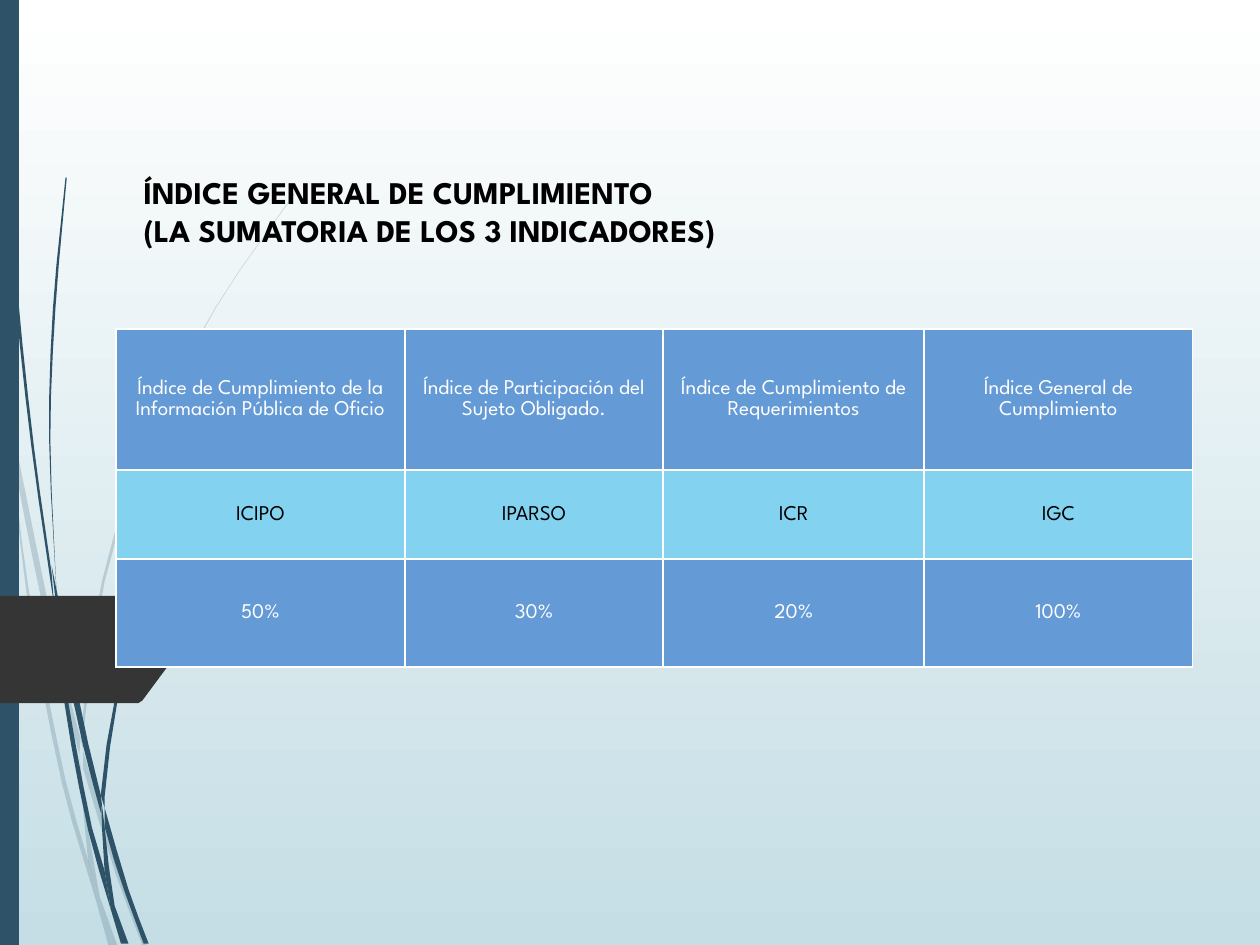
import itertools
import math

import lxml.etree
import pptx
import pptx.dml.color
import pptx.enum.shapes
import pptx.enum.text
import pptx.oxml
import pptx.oxml.ns
import pptx.util

Cm = pptx.util.Cm
FONT = "League Spartan"
COLORS = {
    "white": "FFFFFF", "black": "000000", "mist": "C5DEE5", "navy": "2E5369",
    "charcoal": "353535", "blue": "649AD6", "sky": "83D2F0",
}
GRID_ROWS = 750
STEP_LENGTH = 45

FAINT_STRANDS = [
    ([(8, 350), (0, 282)], [(0, 299), (8, 350)]),
    ([(11, 345), (13, 376), (43, 522), (63, 599)], [(64, 586), (47, 520), (11, 345)]),
    ([(66, 610), (92, 694), (113, 750)], [(116, 750), (95, 692), (66, 596)]),
    ([(8, 350), (21, 470), (49, 621), (76, 714)], [(70, 683), (52, 619), (23, 469), (8, 350)]),
    ([(63, 599), (70, 683), (79, 711)], [(68, 646), (63, 599)]),
    ([(66, 596), (66, 584), (83, 462), (120, 349), (171, 245), (234, 154)],
     [(234, 153), (171, 244), (118, 348), (81, 461), (64, 585), (66, 596)]),
    ([(70, 683), (76, 714), (86, 750)], [(93, 750), (79, 711), (70, 683)]),
]
DARK_STRANDS = [
    ([(2, 0), (5, 110), (12, 233), (25, 355), (43, 481)],
     [(41, 455), (27, 355), (14, 232), (6, 109), (3, 0)]),
    ([(41, 449), (48, 505), (66, 592), (80, 645)], [(80, 631), (70, 590), (41, 449)]),
    ([(83, 641), (83, 656), (99, 708), (114, 749)], [(118, 749), (102, 706), (83, 641)]),
    ([(43, 477), (51, 557), (70, 659), (88, 722)], [(83, 691), (73, 657), (54, 556), (43, 477)]),
    ([(45, 472), (40, 349), (44, 245), (53, 141)], [(52, 141), (42, 245), (39, 349), (45, 472)]),
    ([(83, 641), (83, 633), (94, 552), (119, 476), (153, 406), (196, 344)],
     [(195, 344), (153, 405), (117, 474), (92, 551), (80, 631), (83, 641)]),
    ([(80, 631), (83, 691), (88, 722), (96, 749)],
     [(102, 749), (91, 719), (83, 656), (80, 631)]),
]
TAG_OUTLINE = [(0, 473), (110, 473), (113, 474), (142, 513), (143, 515),
               (142, 517), (113, 556), (110, 558), (0, 558)]

HEADINGS = [
    "Índice de Cumplimiento de la Información Pública de Oficio",
    "Índice de Participación del Sujeto Obligado.",
    "Índice de Cumplimiento de Requerimientos",
    "Índice General de Cumplimiento",
]
TABLE_ROWS = [
    (2.84, "blue", "white", HEADINGS),
    (1.8, "sky", "black", ["ICIPO", "IPARSO", "ICR", "IGC"]),
    (2.18, "blue", "white", ["50%", "30%", "20%", "100%"]),
]
COLUMN_WIDTHS = [5.82, 5.21, 5.26, 5.41]


def rgb(name):
    """Return the named colour."""
    return pptx.dml.color.RGBColor.from_string(COLORS[name])


def paint(shape, color, opacity=100):
    """Fill a shape with a flat colour, without line or shadow."""
    shape.shadow.inherit = False
    shape.line.fill.background()
    shape.fill.solid()
    shape.fill.fore_color.rgb = rgb(color)
    if opacity < 100:
        tone = shape._element.spPr.find(".//" + pptx.oxml.ns.qn("a:srgbClr"))
        lxml.etree.SubElement(tone, pptx.oxml.ns.qn("a:alpha"), val=str(opacity * 1000))


def smooth(points):
    """Return points along a smooth curve through the given points."""
    last = len(points) - 1

    def slope(index):
        before, after = max(index - 1, 0), min(index + 1, last)
        span = sum(math.dist(points[i], points[i + 1]) for i in range(before, after))
        return [(b - a) / span for a, b in zip(points[before], points[after])]

    curve = [points[0]]
    for index, (start, end) in enumerate(itertools.pairwise(points)):
        length = math.dist(start, end)
        leave, arrive = slope(index), slope(index + 1)
        steps = math.ceil(length / STEP_LENGTH)
        for step in range(1, steps + 1):
            t = step / steps
            curve.append(tuple(
                (2 * t**3 - 3 * t**2 + 1) * start[axis] + (3 * t**2 - 2 * t**3) * end[axis]
                + length * ((t**3 - 2 * t**2 + t) * leave[axis] + (t**3 - t**2) * arrive[axis])
                for axis in (0, 1)))
    return curve


def add_outline(page, box, points, color, opacity=100):
    """Draw a closed outline given on a grid that fills the height of the box."""
    left, top, _, height = box
    unit = height / GRID_ROWS
    corners = [(Cm(left + x * unit), Cm(top + y * unit)) for x, y in points]
    builder = page.shapes.build_freeform(*corners[0])
    builder.add_line_segments(corners[1:], close=True)
    paint(builder.convert_to_shape(), color, opacity)


def add_decoration(page, box):
    """Draw the grass strands, the side bar and the tag at the left of the box."""
    for strands, opacity in ((FAINT_STRANDS, 20), (DARK_STRANDS, 100)):
        for outward, back in strands:
            add_outline(page, box, smooth(outward) + smooth(back), "navy", opacity)
    left, top, _, height = box
    bar = page.shapes.add_shape(
        pptx.enum.shapes.MSO_SHAPE.RECTANGLE, Cm(left), Cm(top), Cm(0.38), Cm(height))
    paint(bar, "navy")
    add_outline(page, box, TAG_OUTLINE, "charcoal")


def add_span(para, text, size, color, bold):
    """Add one formatted run to a paragraph."""
    span = para.add_run()
    span.text = text
    span.font.name = FONT
    span.font.size = pptx.util.Pt(size)
    span.font.bold = bold
    span.font.color.rgb = rgb(color)


def add_title(page, box, lines):
    """Place the title lines at the bottom of the box, in front of the decoration."""
    title = page.shapes.title
    page.shapes._spTree.append(title._element)
    title.left, title.top, title.width, title.height = map(Cm, box)
    frame = title.text_frame
    frame.word_wrap = True
    frame.auto_size = pptx.enum.text.MSO_AUTO_SIZE.NONE
    frame.vertical_anchor = pptx.enum.text.MSO_ANCHOR.BOTTOM
    frame.margin_bottom = Cm(0.9)
    for index, line in enumerate(lines):
        para = frame.add_paragraph() if index else frame.paragraphs[0]
        para.alignment = pptx.enum.text.PP_ALIGN.LEFT
        add_span(para, line, 18, "black", True)


def format_cell(cell, text, fill, color, inset):
    """Fill a table cell with centred text and white borders."""
    cell.fill.solid()
    cell.fill.fore_color.rgb = rgb(fill)
    cell.vertical_anchor = pptx.enum.text.MSO_ANCHOR.MIDDLE
    cell.margin_left = cell.margin_right = Cm(inset)
    cell.margin_top = cell.margin_bottom = 0
    para = cell.text_frame.paragraphs[0]
    para.alignment = pptx.enum.text.PP_ALIGN.CENTER
    para.line_spacing = 1.07
    add_span(para, text, 12, color, False)
    properties = cell._tc.get_or_add_tcPr()
    for position, side in enumerate("LRTB"):
        properties.insert(position, pptx.oxml.parse_xml(
            f'<a:ln{side} {pptx.oxml.ns.nsdecls("a")} w="12700"><a:solidFill>'
            f'<a:srgbClr val="{COLORS["white"]}"/></a:solidFill></a:ln{side}>'))


def add_index_table(page, box):
    """Place the table of indices and their weights in the box."""
    table = page.shapes.add_table(len(TABLE_ROWS), len(COLUMN_WIDTHS), *map(Cm, box)).table
    for column, width in zip(table.columns, COLUMN_WIDTHS):
        column.width = Cm(width)
    for row, (height, fill, color, texts) in zip(table.rows, TABLE_ROWS):
        row.height = Cm(height)
        for index, (cell, text) in enumerate(zip(row.cells, texts)):
            format_cell(cell, text, fill, color, 0.1 if index else 0)


def main():
    """Build the slide and save the deck."""
    deck = pptx.Presentation()
    deck.slide_width, deck.slide_height = Cm(25.4), Cm(19.05)
    page = deck.slides.add_slide(deck.slide_layouts[5])
    backdrop = page.background.fill
    backdrop.gradient()
    backdrop.gradient_angle = 270
    for stop, color in zip(backdrop.gradient_stops, ("white", "mist")):
        stop.color.rgb = rgb(color)
    add_decoration(page, (0, 0, 25.4, 19.05))
    add_title(page, (2.64, 2.18, 14.02, 3.73),
              ["ÍNDICE GENERAL DE CUMPLIMIENTO", "(LA SUMATORIA DE LOS 3 INDICADORES)"])
    add_index_table(page, (2.34, 6.63, sum(COLUMN_WIDTHS), 6.82))
    deck.save("out.pptx")


if __name__ == "__main__":
    main()
